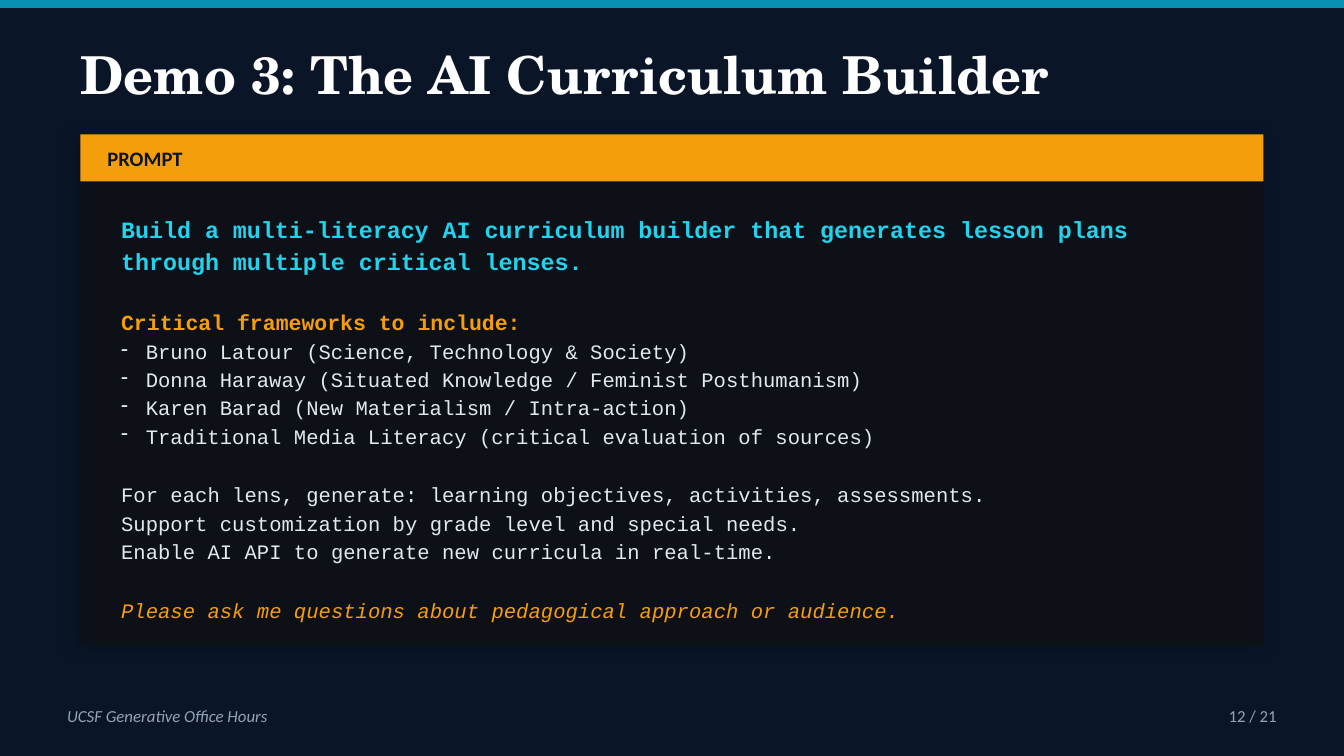
"""Build the curriculum builder prompt slide."""

import dataclasses

import lxml.etree
import pptx
import pptx.dml.color
import pptx.enum.shapes
import pptx.enum.text
import pptx.oxml
import pptx.oxml.ns
import pptx.util

Cm = pptx.util.Cm
Pt = pptx.util.Pt
Align = pptx.enum.text.PP_ALIGN


@dataclasses.dataclass(frozen=True)
class Theme:
    navy: str = "0A1628"
    teal: str = "0891B2"
    white: str = "FFFFFF"
    ink: str = "0D1117"
    amber: str = "F59E0B"
    cyan: str = "22D3EE"
    pale: str = "E2E8F0"
    slate: str = "94A3B8"
    serif: str = "TeX Gyre Schola"
    sans: str = "Calibri"
    mono: str = "Courier New"
    head: float = 28
    lead: float = 12.5
    sub: float = 11.5
    body: float = 11
    foot: float = 9
    gap: float = 16.3
    dash: float = 13.2
    pitch: float = 1.15


@dataclasses.dataclass(frozen=True)
class Rect:
    left: float
    top: float
    width: float
    height: float

    def sides(self) -> tuple:
        return tuple(Cm(side) for side in dataclasses.astuple(self))


@dataclasses.dataclass(frozen=True)
class Line:
    text: str
    size: float
    color: str
    font: str
    bold: bool = False
    slant: bool = False
    gap: float = 0
    dash: bool = False
    pitch: float = 1
    align: Align = Align.LEFT


THEME = Theme()
WIDTH, HEIGHT = 25.4, 14.29
EDGE, TOP = 1.52, 2.54
SPAN = WIDTH - 2 * EDGE


def prompt(text: str, size: float = THEME.body, color: str = THEME.pale, **style) -> Line:
    return Line(text, size, color, THEME.mono, pitch=THEME.pitch, **style)


def footer(text: str, **style) -> Line:
    return Line(text, THEME.foot, THEME.slate, THEME.sans, **style)


BARS = [
    (Rect(0, 0, WIDTH, 0.15), THEME.teal, False),
    (Rect(EDGE, TOP, SPAN, 9.65), THEME.ink, True),
    (Rect(EDGE, TOP, SPAN, 0.89), THEME.amber, False),
]
TITLE = Line("Demo 3: The AI Curriculum Builder", THEME.head, THEME.white, THEME.serif, bold=True)
PROMPT = [
    prompt("Build a multi-literacy AI curriculum builder that generates lesson plans "
           "through multiple critical lenses.", THEME.lead, THEME.cyan, bold=True),
    prompt("Critical frameworks to include:", THEME.sub, THEME.amber, bold=True, gap=THEME.gap),
    prompt("Bruno Latour (Science, Technology & Society)", dash=True),
    prompt("Donna Haraway (Situated Knowledge / Feminist Posthumanism)", dash=True),
    prompt("Karen Barad (New Materialism / Intra-action)", dash=True),
    prompt("Traditional Media Literacy (critical evaluation of sources)", dash=True),
    prompt("For each lens, generate: learning objectives, activities, assessments.", gap=THEME.gap),
    prompt("Support customization by grade level and special needs."),
    prompt("Enable AI API to generate new curricula in real-time."),
    prompt("Please ask me questions about pedagogical approach or audience.",
           color=THEME.amber, slant=True, gap=THEME.gap),
]
BOXES = [
    (Rect(2.03, 2.59, 5.08, 0.81),
     [Line("PROMPT", THEME.body, THEME.navy, THEME.sans, bold=True)]),
    (Rect(2.29, 3.81, 21.08, 8.13), PROMPT),
    (Rect(1.27, 13.08, 10.16, 0.89), [footer("UCSF Generative Office Hours", slant=True)]),
    (Rect(21.59, 13.08, 2.54, 0.89), [footer("12 / 21", align=Align.RIGHT)]),
]


def paint(fill, color: str) -> None:
    fill.solid()
    fill.fore_color.rgb = pptx.dml.color.RGBColor.from_string(color)


def shade(shape) -> None:
    glow = pptx.oxml.parse_xml(
        f'<a:outerShdw {pptx.oxml.ns.nsdecls("a")} blurRad="{Pt(8)}" dist="{Pt(3)}" '
        'dir="8100000" algn="bl" rotWithShape="0"><a:srgbClr val="000000">'
        '<a:alpha val="25000"/></a:srgbClr></a:outerShdw>')
    shape._element.spPr.find(pptx.oxml.ns.qn("a:effectLst")).append(glow)


def draw_bar(slide, rect: Rect, color: str, raised: bool) -> None:
    bar = slide.shapes.add_shape(pptx.enum.shapes.MSO_SHAPE.RECTANGLE, *rect.sides())
    paint(bar.fill, color)
    bar.line.fill.background()
    bar.shadow.inherit = False
    if raised:
        shade(bar)


def add_dash(para) -> None:
    props = para._p.get_or_add_pPr()
    props.set("marL", str(Pt(THEME.dash)))
    props.set("indent", str(-Pt(THEME.dash)))
    mark = lxml.etree.SubElement(props, pptx.oxml.ns.qn("a:buChar"))
    mark.set("char", "-")


def write(frame, lines: list[Line]) -> None:
    frame.word_wrap = True
    frame.auto_size = pptx.enum.text.MSO_AUTO_SIZE.NONE
    frame.vertical_anchor = pptx.enum.text.MSO_ANCHOR.MIDDLE
    frame.margin_left = frame.margin_right = frame.margin_top = frame.margin_bottom = 0
    for rank, line in enumerate(lines):
        para = frame.add_paragraph() if rank else frame.paragraphs[0]
        para.alignment = line.align
        para.line_spacing = line.pitch
        if line.gap:
            para.space_before = Pt(line.gap)
        if line.dash:
            add_dash(para)
        run = para.add_run()
        run.text = line.text
        font = run.font
        font.name, font.size = line.font, Pt(line.size)
        font.bold, font.italic = line.bold, line.slant
        font.color.rgb = pptx.dml.color.RGBColor.from_string(line.color)


def main() -> None:
    deck = pptx.Presentation()
    deck.slide_width, deck.slide_height = Cm(WIDTH), Cm(HEIGHT)
    slide = deck.slides.add_slide(deck.slide_layouts[5])
    paint(slide.background.fill, THEME.navy)
    title = slide.shapes.title
    title.left, title.top, title.width, title.height = Rect(EDGE, 0.64, 22.86, 1.52).sides()
    write(title.text_frame, [TITLE])
    for bar in BARS:
        draw_bar(slide, *bar)
    for rect, lines in BOXES:
        write(slide.shapes.add_textbox(*rect.sides()).text_frame, lines)
    deck.save("out.pptx")


if __name__ == "__main__":
    main()
